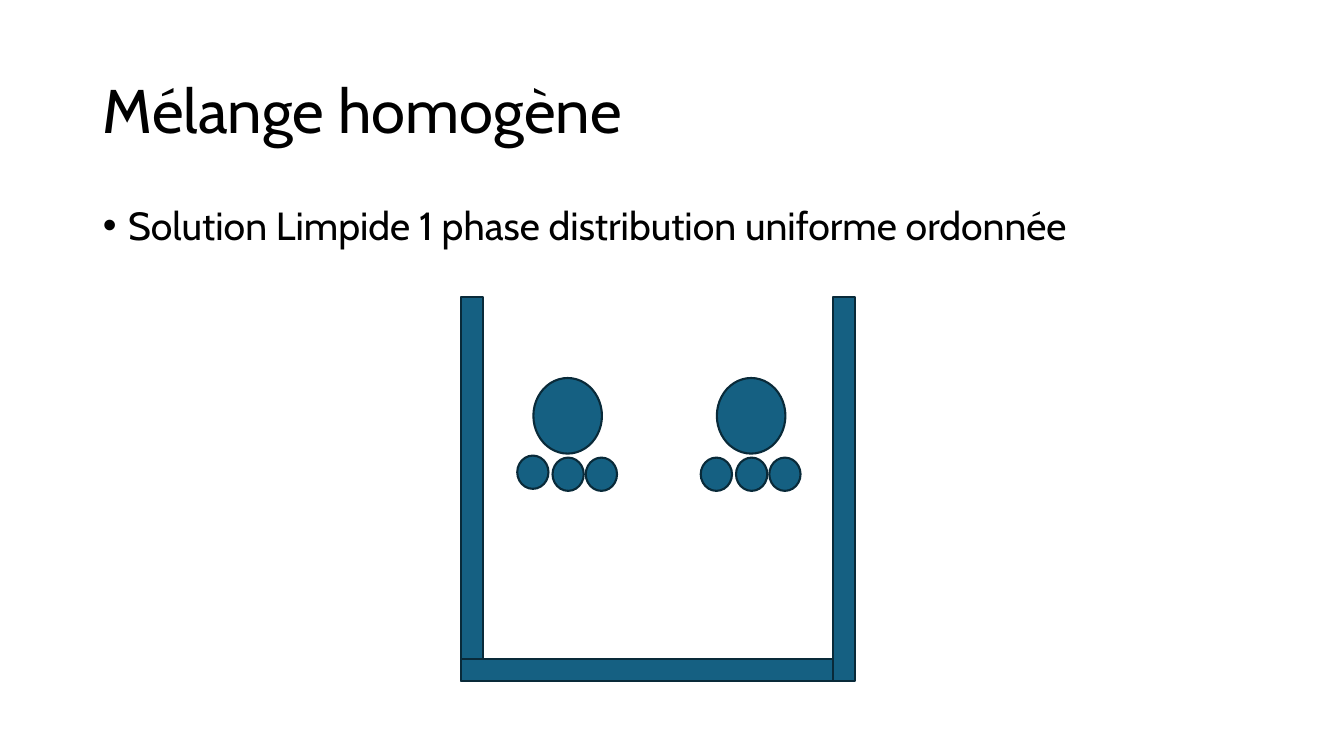
from pptx import Presentation
from pptx.dml.color import RGBColor
from pptx.enum.shapes import MSO_SHAPE as Shape
from pptx.enum.text import MSO_ANCHOR as Anchor, MSO_AUTO_SIZE as AutoSize, PP_ALIGN as Align
from pptx.util import Inches, Pt
from lxml.etree import SubElement
from pptx.oxml.ns import qn

FONT = "Cabin"
BLACK, BLUE, NAVY = "000000", "156082", "092A39"


def color(hex_value):
    return RGBColor.from_string(hex_value)


def fill_placeholder(holder, box, text, size, anchor):
    """Place a placeholder and write its single paragraph."""
    holder.left, holder.top, holder.width, holder.height = map(Inches, box)
    frame = holder.text_frame
    frame.word_wrap = True
    frame.auto_size = AutoSize.NONE
    frame.vertical_anchor = anchor
    frame.text = text
    para = frame.paragraphs[0]
    para.alignment = Align.LEFT
    para.line_spacing = 0.9
    para.font.name = FONT
    para.font.size = Pt(size)
    para.font.color.rgb = color(BLACK)
    return para


def add_title(slide, box):
    para = fill_placeholder(slide.shapes.title, box, "Mélange homogène", 44, Anchor.MIDDLE)
    para.space_before = Pt(0)


def add_body(slide, box):
    text = "Solution Limpide 1 phase distribution uniforme ordonnée"
    para = fill_placeholder(slide.placeholders[1], box, text, 28, Anchor.TOP)
    para.space_before = Pt(10)
    # Bullet with a hanging indent
    properties = para._p.get_or_add_pPr()
    properties.set("marL", str(Inches(0.25)))
    properties.set("indent", str(Inches(-0.25)))
    SubElement(properties, qn("a:buFont"), typeface="Arial")
    SubElement(properties, qn("a:buChar"), char="•")


def add_solid(slide, kind, left, top, width, height):
    shape = slide.shapes.add_shape(kind, *map(Inches, (left, top, width, height)))
    shape.shadow.inherit = False
    shape.fill.solid()
    shape.fill.fore_color.rgb = color(BLUE)
    shape.line.color.rgb = color(NAVY)
    shape.line.width = Pt(1.5)
    return shape


def add_beaker(slide, box, wall=0.22):
    """Two upright walls and a bottom that ends within the right wall."""
    left, top, width, height = box
    right_wall = left + width - wall
    add_solid(slide, Shape.RECTANGLE, left, top, wall, height)
    add_solid(slide, Shape.RECTANGLE, left, top + height - wall, height, wall)
    add_solid(slide, Shape.RECTANGLE, right_wall, top, wall, height)


def add_molecule(slide, box, first_lift=0):
    """One large particle above a row of three small ones."""
    left, top, width, height = box
    small_width, small_height = 0.31, 0.33
    add_solid(slide, Shape.FLOWCHART_CONNECTOR, left + 0.16, top, 0.68, 0.75)
    row_top = top + height - small_height
    for offset, lift in ((width - small_width, 0), (0.35, 0), (0, first_lift)):
        add_solid(slide, Shape.FLOWCHART_CONNECTOR, left + offset, row_top - lift,
                  small_width, small_height)


def main():
    deck = Presentation()
    deck.slide_width, deck.slide_height = Inches(13.33), Inches(7.5)
    slide = deck.slides.add_slide(deck.slide_layouts[1])

    # Text
    add_title(slide, (0.92, 0.4, 11.5, 1.45))
    add_body(slide, (0.92, 2, 11.5, 4.76))

    # Beaker with its two molecules
    add_beaker(slide, (4.57, 2.95, 3.91, 3.81))
    add_molecule(slide, (5.13, 3.75, 0.99, 1.12), first_lift=0.02)
    add_molecule(slide, (6.95, 3.75, 0.99, 1.12))

    deck.save("out.pptx")


if __name__ == "__main__":
    main()
